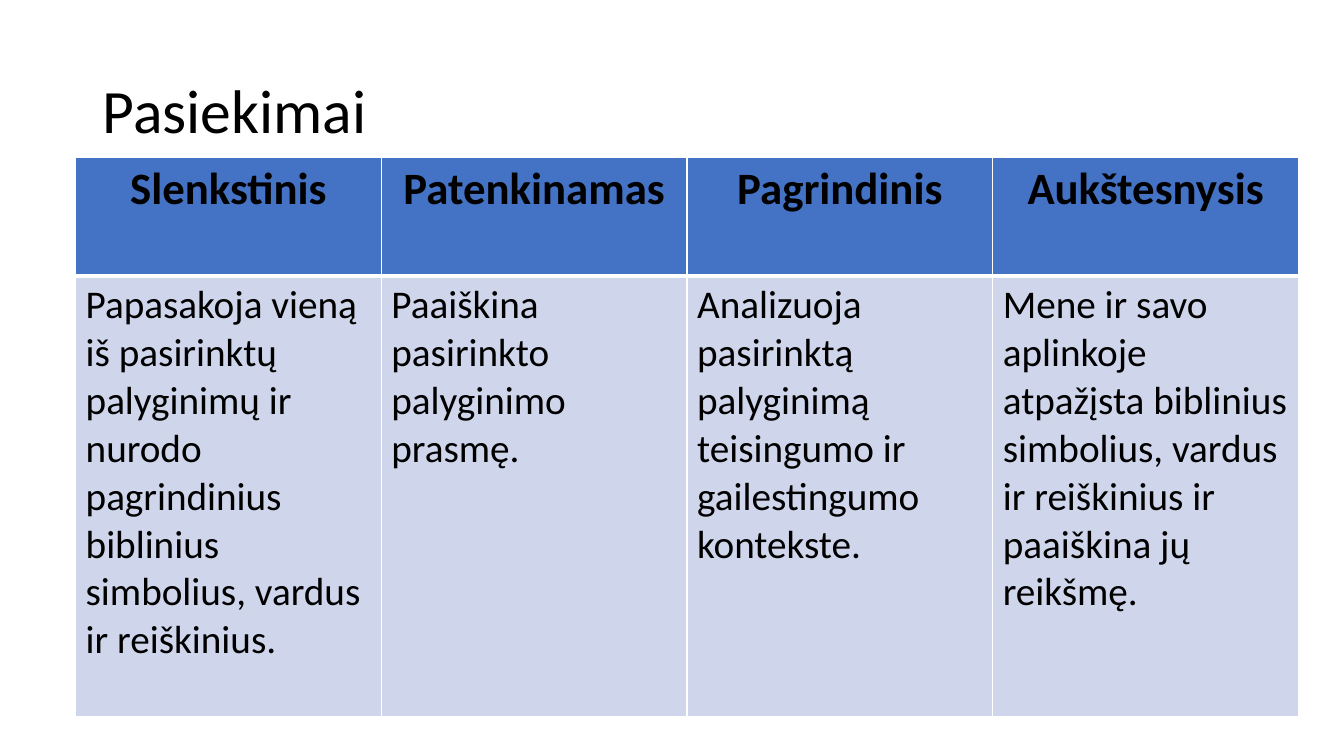
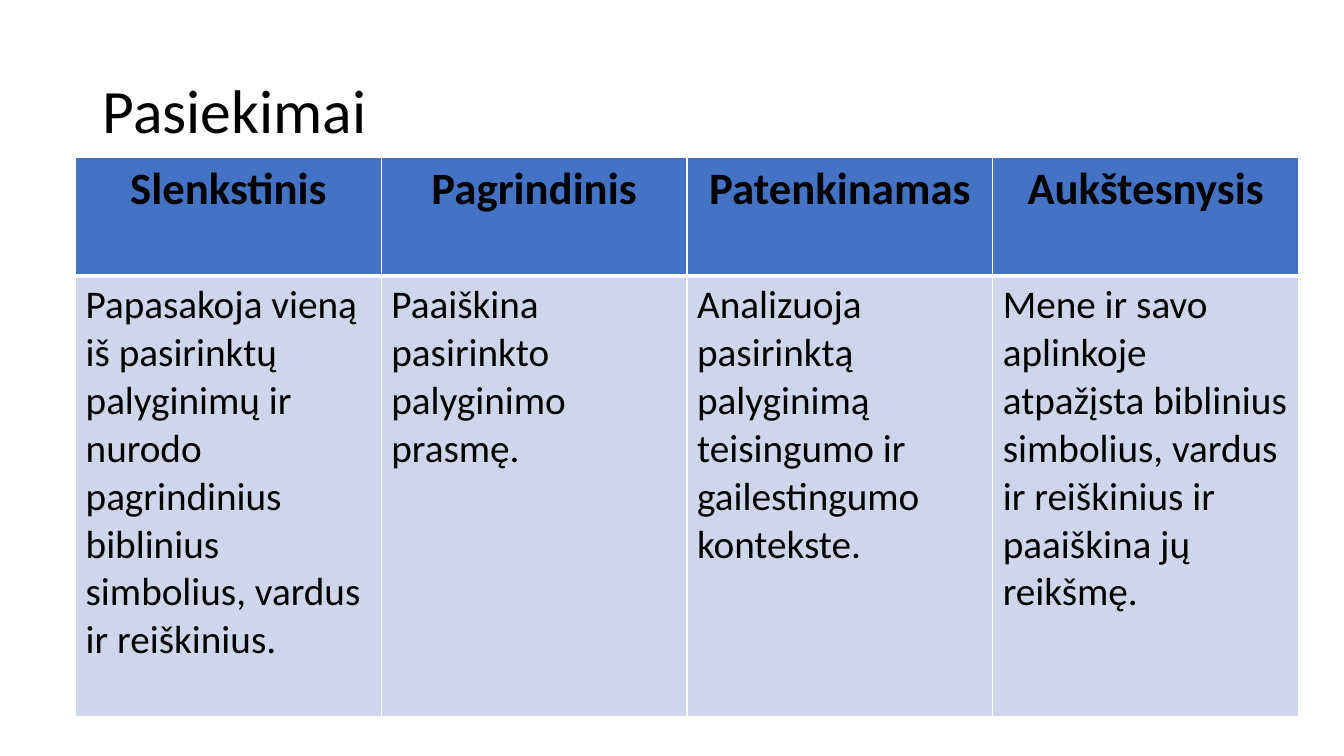
from lxml import etree
from pptx import Presentation
from pptx.dml.color import RGBColor
from pptx.enum.text import MSO_ANCHOR, PP_ALIGN
from pptx.oxml.ns import qn
from pptx.util import Inches, Pt

MIDDLE = MSO_ANCHOR.MIDDLE
LEFT, CENTER = PP_ALIGN.LEFT, PP_ALIGN.CENTER

# Content
TITLE = "Pasiekimai"
LEVELS = [
    ("Slenkstinis", "Patenkinamas", "Pagrindinis", "Aukštesnysis"),
    ("Slenkstinis", "Pagrindinis", "Patenkinamas", "Aukštesnysis"),
]
DESCRIPTIONS = (
    "Papasakoja vieną iš pasirinktų palyginimų ir nurodo pagrindinius "
    "biblinius simbolius, vardus ir reiškinius.",
    "Paaiškina pasirinkto palyginimo prasmę.",
    "Analizuoja pasirinktą palyginimą teisingumo ir gailestingumo kontekste.",
    "Mene ir savo aplinkoje atpažįsta biblinius simbolius, vardus ir "
    "reiškinius ir paaiškina jų reikšmę.",
)

# Shared style
FONT = "Calibri"
BLACK = RGBColor(0x00, 0x00, 0x00)
WHITE = RGBColor(0xFF, 0xFF, 0xFF)
BLUE = RGBColor(0x44, 0x72, 0xC4)
PALE_BLUE = RGBColor(0xCF, 0xD5, 0xEA)
THIN, THICK = Pt(1), Pt(3)

TITLE_BOX = (Inches(0.92), Inches(0.4), Inches(11.5), Inches(1.45))
TABLE_LEFT, TABLE_TOP, TABLE_WIDTH = Inches(0.75), Inches(1.56), Inches(12.13)
ROW_HEIGHTS = (Inches(1.18), Inches(4.37))
ROW_STYLES = (
    dict(fill=BLUE, size=32, bold=True, align=CENTER, top=THIN, bottom=THICK),
    dict(fill=PALE_BLUE, size=28, bold=False, align=LEFT, top=THICK, bottom=THIN),
)


def add_run(p, text, size, bold=False):
    r = p.add_run()
    r.text = text
    r.font.name = FONT
    r.font.size = Pt(size)
    r.font.bold = bold
    r.font.color.rgb = BLACK


def set_borders(cell, top, bottom):
    tc_pr = cell._tc.get_or_add_tcPr()
    widths = (("lnL", THIN), ("lnR", THIN), ("lnT", top), ("lnB", bottom))
    # Borders come before the fill in the cell properties
    for i, (tag, width) in enumerate(widths):
        line = etree.Element(qn("a:" + tag), w=str(width))
        fill = etree.SubElement(line, qn("a:solidFill"))
        etree.SubElement(fill, qn("a:srgbClr"), val=str(WHITE))
        tc_pr.insert(i, line)


def add_title(s):
    tf = s.shapes.add_textbox(*TITLE_BOX).text_frame
    tf.word_wrap = True
    tf.vertical_anchor = MIDDLE
    p = tf.paragraphs[0]
    p.line_spacing = 0.9
    add_run(p, TITLE, 44)


def add_levels_table(s, rows):
    n_cols = len(rows[0])
    table = s.shapes.add_table(len(rows), n_cols, TABLE_LEFT, TABLE_TOP,
                               TABLE_WIDTH, sum(ROW_HEIGHTS)).table
    for row, height, texts, style in zip(table.rows, ROW_HEIGHTS, rows, ROW_STYLES):
        row.height = height
        for cell, text in zip(row.cells, texts):
            cell.fill.solid()
            cell.fill.fore_color.rgb = style["fill"]
            set_borders(cell, style["top"], style["bottom"])
            p = cell.text_frame.paragraphs[0]
            p.alignment = style["align"]
            add_run(p, text, style["size"], style["bold"])


def main():
    prs = Presentation()
    prs.slide_width, prs.slide_height = Inches(13.33), Inches(7.5)
    blank = prs.slide_layouts[6]
    for levels in LEVELS:
        s = prs.slides.add_slide(blank)
        add_title(s)
        add_levels_table(s, (levels, DESCRIPTIONS))
    prs.save("out.pptx")


if __name__ == "__main__":
    main()
